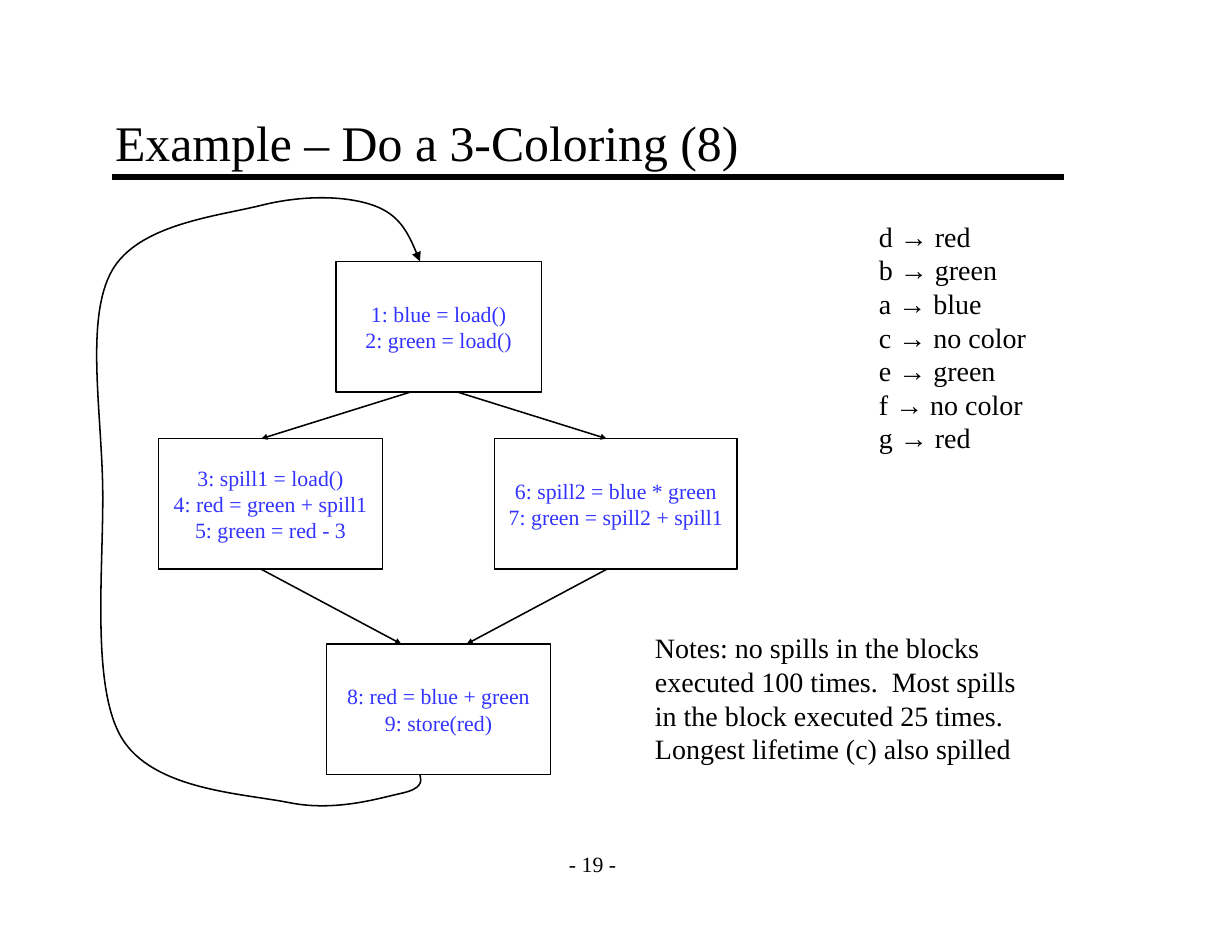
"""Builds the slide on a 3-coloring example with spilled values."""
from lxml.etree import SubElement
from pptx import Presentation
from pptx.dml.color import RGBColor
from pptx.enum.shapes import MSO_CONNECTOR, MSO_SHAPE
from pptx.enum.text import MSO_ANCHOR, PP_ALIGN
from pptx.oxml.ns import qn
from pptx.util import Pt

BLACK = RGBColor(0x00, 0x00, 0x00)
BLUE = RGBColor(0x33, 0x33, 0xFF)

BLOCKS = [
    (216, 168, 132, "1: blue = load()\n2: green = load()"),
    (102, 282, 144, "3: spill1 = load()\n4: red = green + spill1\n5: green = red - 3"),
    (318, 282, 156, "6: spill2 = blue * green\n7: green = spill2 + spill1"),
    (210, 414, 144, "8: red = blue + green\n9: store(red)"),
]
EDGES = [
    (264, 252, 168, 282),
    (294, 252, 390, 282),
    (168, 366, 258, 414),
    (390, 366, 300, 414),
]
LOOP = [
    (270, 498),
    (271, 502), (272, 507), (258, 510),
    (244, 513), (216, 522), (186, 516),
    (156, 510), (98, 508), (78, 474),
    (58, 440), (67, 362), (66, 312),
    (65, 262), (55, 204), (72, 174),
    (89, 144), (140, 139), (168, 132),
    (196, 125), (223, 126), (240, 132),
    (257, 138), (264, 153), (270, 168),
]
COLORS = """d → red
b → green
a → blue
c → no color
e → green
f → no color
g → red"""
NOTES = """Notes: no spills in the blocks
executed 100 times.  Most spills
in the block executed 25 times.
Longest lifetime (c) also spilled"""


def write(frame, text, size=18, color=BLACK, align=PP_ALIGN.LEFT,
          anchor=MSO_ANCHOR.TOP, wrap=False, pad=(7.2, 3.6)):
    frame.word_wrap = wrap
    frame.vertical_anchor = anchor
    frame.margin_left = frame.margin_right = Pt(pad[0])
    frame.margin_top = frame.margin_bottom = Pt(pad[1])
    frame.text = text
    for para in frame.paragraphs:
        para.alignment = align
        font = para.runs[0].font
        font.name, font.size = "Times New Roman", Pt(size)
        font.color.rgb = color


class Deck:
    def __init__(self, width, height):
        self.show = Presentation()
        self.show.slide_width, self.show.slide_height = Pt(width), Pt(height)
        self.slide = self.show.slides.add_slide(self.show.slide_layouts[5])
        self.shapes = self.slide.shapes

    def stroke(self, shape, width=1, arrow=None):
        shape.line.color.rgb = BLACK
        shape.line.width = Pt(width)
        if arrow:
            line = shape.element.spPr.find(qn("a:ln"))
            SubElement(line, qn("a:tailEnd"), type="triangle", w=arrow, len=arrow)

    def title(self, text, *place):
        head = self.shapes.title
        head.left, head.top, head.width, head.height = map(Pt, place)
        write(head.text_frame, text, size=32, anchor=MSO_ANCHOR.BOTTOM,
              wrap=True, pad=(8, 4))

    def label(self, text, *place, **style):
        box = self.shapes.add_textbox(*map(Pt, place))
        write(box.text_frame, text, **style)

    def block(self, text, *place):
        box = self.shapes.add_shape(MSO_SHAPE.RECTANGLE, *map(Pt, place))
        box.shadow.inherit = False
        box.fill.background()
        self.stroke(box)
        write(box.text_frame, text, size=14, color=BLUE,
              align=PP_ALIGN.CENTER, anchor=MSO_ANCHOR.MIDDLE)

    def line(self, *ends, width=1, arrow=None):
        link = self.shapes.add_connector(MSO_CONNECTOR.STRAIGHT, *map(Pt, ends))
        self.stroke(link, width, arrow)
        SubElement(link.element.spPr, qn("a:effectLst"))

    def curve(self, points):
        pen = self.shapes.build_freeform(*points[0], scale=Pt(1))
        pen.add_line_segments(points[1:], close=False)
        shape = pen.convert_to_shape()
        shape.shadow.inherit = False
        shape.fill.background()
        self.stroke(shape, arrow="med")
        track = next(shape.element.iter(qn("a:path")))
        steps = track.findall(qn("a:lnTo"))
        for start in range(0, len(steps), 3):
            bend = SubElement(track, qn("a:cubicBezTo"))
            for step in steps[start:start + 3]:
                bend.append(step[0])
                track.remove(step)


def main():
    deck = Deck(792, 612)
    deck.line(72, 114, 684, 114, width=4)
    deck.label("- 19 -", 354, 540, 54, 30, size=14,
               align=PP_ALIGN.CENTER, anchor=MSO_ANCHOR.MIDDLE)
    deck.title("Example – Do a 3-Coloring (8)", 66, 66, 612, 48)
    for left, top, width, text in BLOCKS:
        deck.block(text, left, top, width, 84)
    for ends in EDGES:
        deck.line(*ends, arrow="sm")
    deck.curve(LOOP)
    deck.label(COLORS, 558, 137.5, 116, 158.4)
    deck.label(NOTES, 414, 402, 252, 93.6)
    deck.show.save("out.pptx")


if __name__ == "__main__":
    main()
